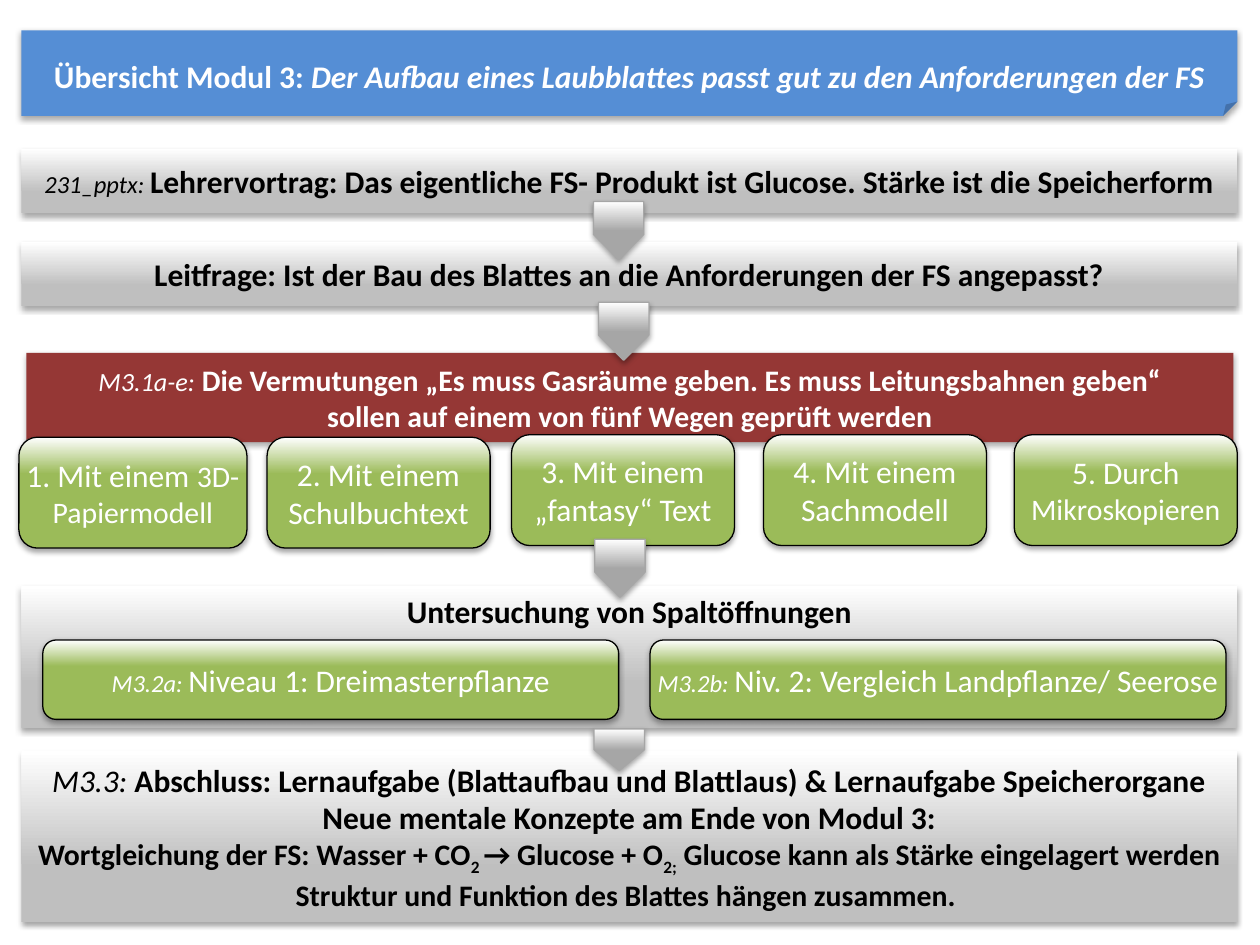
import pptx
import pptx.dml.color
import pptx.enum.shapes
import pptx.enum.text
import pptx.oxml
import pptx.util
from pptx.util import Inches

FONT = "Calibri"
BLACK, WHITE = "000000", "FFFFFF"
BLUE, RED, GREEN = "558ED5", "953735", "9BBB59"
SILVER, GREY = "BFBFBF", "A6A6A6"
BAND_LEFT, BAND_WIDTH = 0.17, 9.65
ARROW_THICKNESS = 0.4
SHAPES = pptx.enum.shapes.MSO_SHAPE
ANCHOR = pptx.enum.text.MSO_ANCHOR

# A run is (text, size, style); style holds b = bold, i = italic, s = subscript.
TITLE = [[("Übersicht Modul 3: ", 18, "b"),
          ("Der Aufbau eines Laubblattes passt gut zu den Anforderungen der FS", 18, "bi")]]
HYPOTHESES = [[("M3.1a-e:", 15, "i"),
               (" Die Vermutungen „Es muss Gasräume geben. Es muss Leitungsbahnen geben“\n"
                "sollen auf einem von fünf Wegen geprüft werden", 17, "b")]]
# left, top, width, runs
WAYS = [
    (2.12, 3.47, 1.77, [("2. Mit einem Schulbuchtext", 18, "")]),
    (0.15, 3.47, 1.81, [("1. Mit einem ", 18, ""), ("3D-Papiermodell", 17, "")]),
    (6.06, 3.45, 1.77, [("4. Mit einem Sachmodell", 18, "")]),
    (4.06, 3.45, 1.77, [("3. Mit einem „fantasy“ Text", 18, "")]),
    (8.05, 3.45, 1.77, [("5. Durch ", 18, ""), ("Mikroskopieren", 17, "")]),
]
LEVELS = [
    (0.34, [("M3.2a: ", 14, "i"), ("Niveau 1: Dreimasterpflanze", 18, "")]),
    (5.16, [("M3.2b: ", 14, "i"), ("Niv. 2: Vergleich Landpflanze/ Seerose", 18, "")]),
]
LECTURE = [[("231_pptx: ", 14, "i"),
            ("Lehrervortrag: Das eigentliche FS- Produkt ist Glucose. "
             "Stärke ist die Speicherform", 18, "b")]]
QUESTION = [[("Leitfrage: Ist der Bau des Blattes an die Anforderungen der FS angepasst?", 18, "b")]]
STOMATA = [[("Untersuchung von Spaltöffnungen", 18, "b")]]
CONCLUSION = [
    [("M3.3: ", 18, "i"),
     ("Abschluss: Lernaufgabe (Blattaufbau und Blattlaus) & Lernaufgabe Speicherorgane", 18, "b")],
    [("Neue mentale Konzepte am Ende von Modul 3:", 18, "b")],
    [("Wortgleichung der FS: Wasser + CO", 17, "b"), ("2 ", 17, "bs"),
     ("→ Glucose + O", 17, "b"), ("2;", 17, "bs"),
     (" Glucose kann als Stärke eingelagert werden", 17, "b")],
    [("Struktur und Funktion des Blattes hängen zusammen. ", 17, "b")],
]

SHADOW = """<a:outerShdw xmlns:a="http://schemas.openxmlformats.org/drawingml/2006/main"
 blurRad="40000" dist="23000" dir="5400000" rotWithShape="0">
 <a:srgbClr val="000000"><a:alpha val="35000"/></a:srgbClr></a:outerShdw>"""


def color(value):
    return pptx.dml.color.RGBColor.from_string(value)


def write(shape, paragraphs, text_color, anchor=ANCHOR.MIDDLE, side_inset=0.1):
    frame = shape.text_frame
    frame.word_wrap = True
    frame.vertical_anchor = anchor
    frame.margin_left = frame.margin_right = Inches(side_inset)
    for index, runs in enumerate(paragraphs):
        paragraph = frame.add_paragraph() if index else frame.paragraphs[0]
        paragraph.alignment = pptx.enum.text.PP_ALIGN.CENTER
        for text, size, style in runs:
            for line_number, line in enumerate(text.split("\n")):
                if line_number:
                    paragraph.add_line_break()
                run = paragraph.add_run()
                run.text = line
                font = run.font
                font.name, font.size = FONT, pptx.util.Pt(size)
                font.bold, font.italic = "b" in style, "i" in style
                font.color.rgb = color(text_color)
                if "s" in style:
                    font._element.set("baseline", "-25000")


def add_box(kind, left, top, width, height, fill, fade_from=None, angle=90, line=None):
    """Add a shadowed shape; fade_from is where its fill starts fading to white."""
    shape = slide.shapes.add_shape(kind, *map(Inches, (left, top, width, height)))
    if fade_from is None:
        shape.fill.solid()
        shape.fill.fore_color.rgb = color(fill)
    else:
        shape.fill.gradient()
        shape.fill.gradient_angle = angle
        for stop, position, value in zip(shape.fill.gradient_stops, (fade_from, 1), (fill, WHITE)):
            stop.position = position
            stop.color.rgb = color(value)
    if line:
        shape.line.color.rgb = color(line)
        shape.line.width = pptx.util.Pt(0.75)
    else:
        shape.line.fill.background()
    shape.shadow.inherit = False
    effects = shape._element.spPr.find(pptx.oxml.ns.qn("a:effectLst"))
    effects.append(pptx.oxml.parse_xml(SHADOW))
    return shape


def add_band(top, height, paragraphs, anchor=ANCHOR.MIDDLE):
    band = add_box(SHAPES.RECTANGLE, BAND_LEFT, top, BAND_WIDTH, height, SILVER, 0.32)
    write(band, paragraphs, BLACK, anchor)


def add_button(left, top, width, height, runs):
    button = add_box(SHAPES.ROUNDED_RECTANGLE, left, top, width, height, GREEN, 0.67, line=BLACK)
    write(button, [runs], WHITE, side_inset=0)


def add_down_arrow(left, top, length):
    arrow = add_box(SHAPES.PENTAGON, left, top, length, ARROW_THICKNESS, GREY, 0.49,
                    angle=180, line=GREY)
    arrow.rotation = 90


presentation = pptx.Presentation()
presentation.slide_width, presentation.slide_height = Inches(10), Inches(7.5)
slide = presentation.slides.add_slide(presentation.slide_layouts[6])

add_box(SHAPES.FOLDED_CORNER, BAND_LEFT, 0.24, BAND_WIDTH, 0.68, BLUE)
title = slide.shapes.add_textbox(*map(Inches, (BAND_LEFT, 0.4, BAND_WIDTH, 0.4)))
write(title, TITLE, WHITE, ANCHOR.TOP)

write(add_box(SHAPES.RECTANGLE, 0.21, 2.8, 9.58, 0.71, RED), HYPOTHESES, WHITE)
for left, top, width, runs in WAYS:
    add_button(left, top, width, 0.88, runs)

add_band(1.92, 0.51, QUESTION)
add_down_arrow(4.72, 2.43, 0.46)
add_band(4.65, 1.13, STOMATA, ANCHOR.TOP)
add_down_arrow(4.69, 4.31, 0.46)
add_band(5.96, 1.36, CONCLUSION)
add_down_arrow(4.75, 5.75, 0.33)
for left, runs in LEVELS:
    add_button(left, 5.08, 4.57, 0.63, runs)
add_band(1.18, 0.51, LECTURE)
add_down_arrow(4.68, 1.63, 0.46)

presentation.save("out.pptx")
